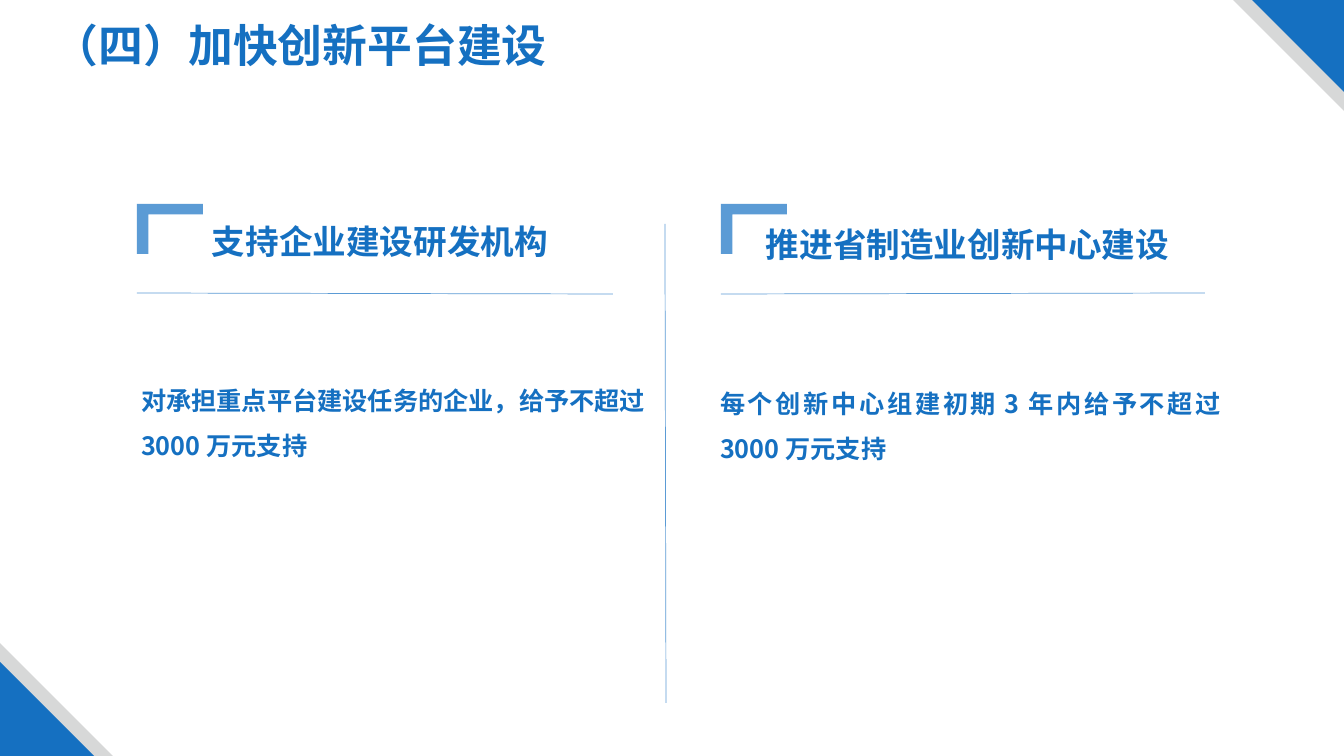
import pptx
import pptx.dml.color
import pptx.enum.shapes
import pptx.enum.text
import pptx.oxml.ns
import pptx.util
from lxml import etree

PX = 914400 / 100.8
BLUE, LIGHT_BLUE, GREY = "1570C1", "5B9BD5", "D7D8D8"
FONT = "Noto Sans CJK SC"
SHAPES = pptx.enum.shapes.MSO_SHAPE
ALIGN = pptx.enum.text.PP_ALIGN
qn = pptx.oxml.ns.qn


def paint(color_format, color):
    color_format.rgb = pptx.dml.color.RGBColor.from_string(color)


def write(holder, text, *, box, size, align=ALIGN.CENTER, spacing=1.0):
    """Place a placeholder at box (px) and fill it with one formatted paragraph."""
    holder.left, holder.top, holder.width, holder.height = (round(v * PX) for v in box)
    frame = holder.text_frame
    frame.word_wrap = True
    frame.auto_size = pptx.enum.text.MSO_AUTO_SIZE.NONE
    frame.vertical_anchor = pptx.enum.text.MSO_ANCHOR.TOP
    paragraph = frame.paragraphs[0]
    paragraph.alignment = align
    paragraph.line_spacing = spacing
    paragraph.space_before = pptx.util.Pt(0)
    properties = paragraph._p.get_or_add_pPr()
    properties.set("marL", "0")
    properties.set("indent", "0")
    etree.SubElement(properties, qn("a:buNone"))
    run = paragraph.add_run()
    run.text = text
    run.font.size = pptx.util.Pt(size)
    run.font.bold = True
    run.font.name = FONT
    paint(run.font.color, BLUE)
    etree.SubElement(run._r.get_or_add_rPr(), qn("a:ea"), typeface=FONT)


deck = pptx.Presentation()
deck.slide_width, deck.slide_height = round(1344 * PX), round(756 * PX)
slide = deck.slides.add_slide(deck.slide_layouts.get_by_name("Comparison"))

# Corner triangles and heading brackets
ornaments = [
    (SHAPES.RIGHT_TRIANGLE, (1233, 0, 111, 111), 180, GREY),
    (SHAPES.RIGHT_TRIANGLE, (1252, 0, 92, 92), 180, BLUE),
    (SHAPES.RIGHT_TRIANGLE, (0, 643, 113, 113), 0, GREY),
    (SHAPES.RIGHT_TRIANGLE, (0, 662, 94, 94), 0, BLUE),
    (SHAPES.CORNER, (145, 196, 50, 66), 90, LIGHT_BLUE),
    (SHAPES.CORNER, (729, 196, 50, 66), 90, LIGHT_BLUE),
]
for preset, box, angle, color in ornaments:
    ornament = slide.shapes.add_shape(preset, *(round(v * PX) for v in box))
    ornament.rotation = angle
    ornament.shadow.inherit = False
    ornament.fill.solid()
    paint(ornament.fill.fore_color, color)
    ornament.line.fill.background()
    if preset == SHAPES.CORNER:
        ornament.adjustments[0] = 0.23
        ornament.adjustments[1] = 0.21

# Heading underlines and the column divider
for ends in [(137, 293, 613, 294), (721, 294, 1205, 293), (665, 224, 666, 703)]:
    rule = slide.shapes.add_connector(
        pptx.enum.shapes.MSO_CONNECTOR.STRAIGHT, *(round(v * PX) for v in ends))
    rule.line.width = pptx.util.Pt(0.5)
    paint(rule.line.color, LIGHT_BLUE)
    etree.SubElement(rule._element.spPr, qn("a:effectLst"))

write(slide.shapes.title, "（四）加快创新平台建设", box=(2, 13, 597, 65), size=32)

measures = [
    ("支持企业建设研发机构", (148, 216, 464, 53),
     "对承担重点平台建设任务的企业，给予不超过3000万元支持", (131, 365, 527, 101)),
    ("推进省制造业创新中心建设", (730, 219, 475, 53),
     "每个创新中心组建初期3年内给予不超过3000万元支持", (710, 368, 527, 97)),
]
placeholders = {holder.placeholder_format.idx: holder for holder in slide.placeholders}
for column, (heading, heading_box, detail, detail_box) in enumerate(measures):
    write(placeholders[1 + 2 * column], heading, box=heading_box, size=24)
    write(placeholders[2 + 2 * column], detail, box=detail_box, size=18,
          align=ALIGN.JUSTIFY, spacing=1.5)

deck.save("out.pptx")
